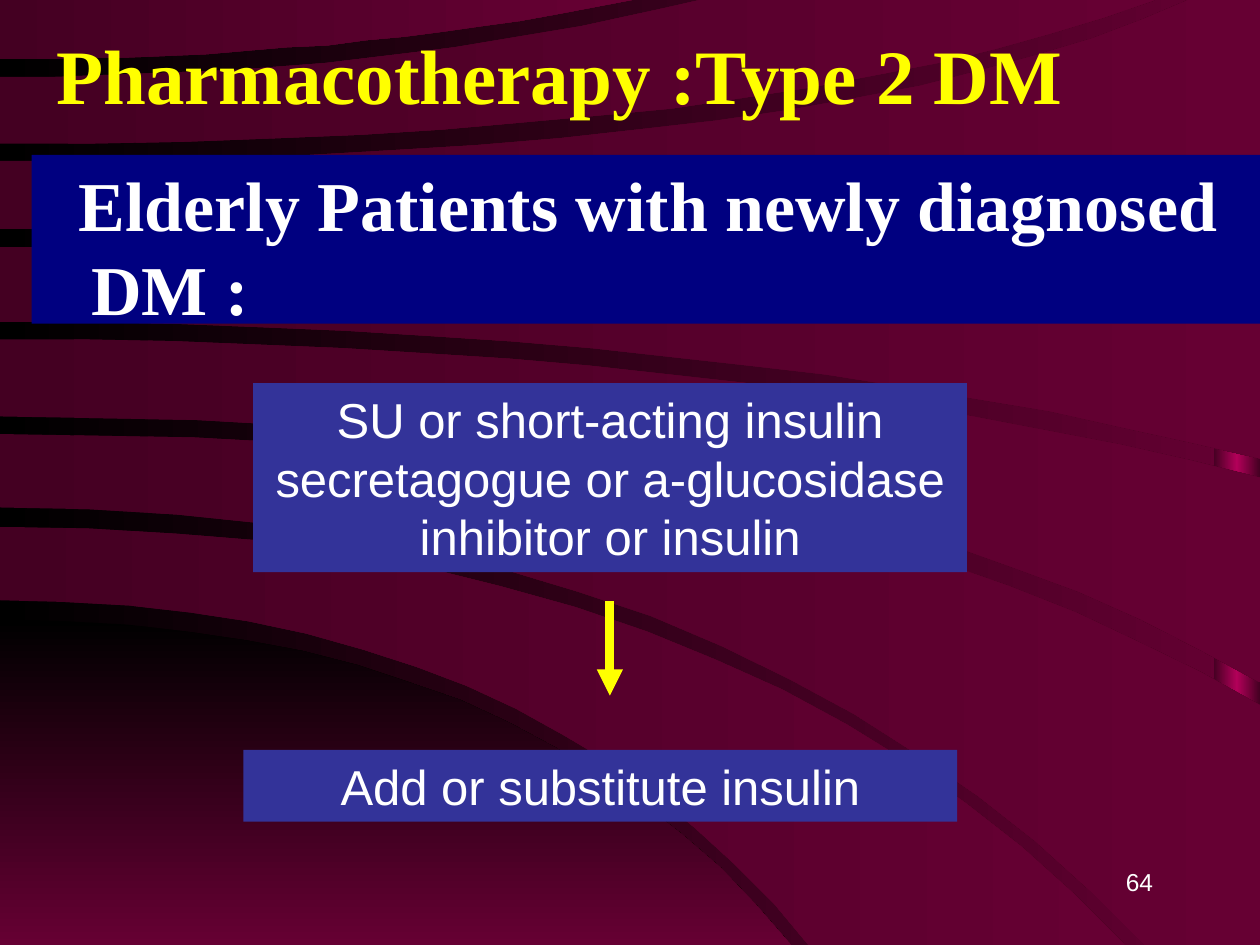
"""Builds a slide on drug therapy for elderly patients with type 2 DM."""
from copy import deepcopy
from dataclasses import dataclass

from pptx import Presentation
from pptx.dml.color import RGBColor
from pptx.dml.fill import FillFormat
from pptx.enum.shapes import MSO_CONNECTOR as Conn, MSO_SHAPE as Kind
from pptx.enum.text import MSO_ANCHOR as Anchor, PP_ALIGN as Align
from pptx.oxml.ns import qn
from pptx.oxml.xmlchemy import OxmlElement as Node
from pptx.slide import Slide
from pptx.util import Pt

WIDE, HIGH = 720, 540
STEPS = 16
BLACK, WINE, PLUM, ROSE = "000000", "660033", "440022", "B20059"
NAVY, BLUE, WHITE, YELLOW = "000080", "333399", "FFFFFF", "FFFF00"
SERIF, SANS = "Times New Roman", "Arial"


@dataclass
class Edge:
    """A curve that leaves the left side level and bends to its end."""
    start: float
    bend: float
    right: float
    end: float

    def trace(self) -> list[tuple[float, float]]:
        """List the points of the curve from left to right."""
        times = [step / STEPS for step in range(STEPS + 1)]
        return [(2 * t * (1 - t) * self.bend + t * t * self.right,
                 self.start + t * t * (self.end - self.start)) for t in times]


@dataclass
class Band:
    top: Edge
    low: Edge
    first: str = PLUM
    angle: float = 0


@dataclass
class Label:
    text: str
    left: float
    top: float
    width: float
    height: float
    size: float
    font: str = SANS
    color: str = WHITE
    fill: str | None = None
    bold: bool = False
    align: Align = Align.LEFT
    anchor: Anchor = Anchor.TOP
    pitch: float | None = None
    before: float = 0
    margin: float = 0
    indent: float = 0


def level(y: float, right: float = WIDE) -> Edge:
    """Make a straight level edge."""
    return Edge(y, right / 2, right, y)


BANDS = (
    Band(Edge(354, 300, 452, HIGH), level(HIGH, 452), BLACK, 270),
    Band(Edge(301, 418, 643, HIGH), Edge(343, 303, 462, HIGH)),
    Band(Edge(248, 458, WIDE, 403), Edge(290, 417, 654, HIGH)),
    Band(Edge(194, 404, WIDE, 273), Edge(238, 462, WIDE, 390)),
    Band(level(141), Edge(184, 408, WIDE, 262)),
    Band(Edge(92, 478, 679, 0), level(131)),
    Band(Edge(44, 222, 400, 0), Edge(82, 438, 660, 0)),
    Band(level(0, 361), Edge(34, 193, 361, 0)),
)

LABELS = (
    Label("64", 516, 492, 150, 36, 14, align=Align.RIGHT),
    Label("Pharmacotherapy :Type 2 DM", 25.2, 0, 672, 84, 44, SERIF, YELLOW,
          bold=True, anchor=Anchor.MIDDLE),
    Label("Elderly Patients with newly diagnosed DM :", 18, 88.5, 702, 96.5, 40, SERIF,
          fill=NAVY, bold=True, pitch=48, before=3, margin=27, indent=-7),
    Label("SU or short-acting insulin secretagogue or a-glucosidase inhibitor or insulin",
          144.6, 219, 408, 108, 28, fill=BLUE, align=Align.CENTER, pitch=33.6),
    Label("Add or substitute insulin", 139, 428.5, 408, 41, 28, fill=BLUE,
          align=Align.CENTER, pitch=33.6),
)


def tint(code: str) -> RGBColor:
    """Turn a hex string into a colour."""
    return RGBColor.from_string(code)


def blend(fill: FillFormat, first: str, last: str, angle: float = 0) -> None:
    """Give a fill a straight two-colour gradient."""
    fill.gradient()
    fill.gradient_angle = angle
    for stop, code, place in zip(fill.gradient_stops, (first, last), (0, 1)):
        stop.color.rgb = tint(code)
        stop.position = place


def draw_strip(slide: Slide) -> None:
    """Draw the shiny strip at the right side."""
    strip = slide.shapes.add_shape(Kind.RECTANGLE, Pt(693.5), 0, Pt(26.5), Pt(HIGH))
    strip.shadow.inherit = False
    strip.line.fill.background()
    blend(strip.fill, PLUM, ROSE)
    stops = strip._element.spPr.find(".//" + qn("a:gsLst"))
    stops[1].set("pos", "50000")
    last = deepcopy(stops[0])
    last.set("pos", "100000")
    stops.append(last)


def draw_band(slide: Slide, band: Band) -> None:
    """Draw the area between two edges, fading to wine."""
    short, long = sorted((band.top, band.low), key=lambda edge: edge.right)
    corner = (long.right, short.end)
    points = [*band.top.trace(), corner, *reversed(band.low.trace())]
    pen = slide.shapes.build_freeform(*points[0], scale=Pt(1))
    pen.add_line_segments(points[1:], close=True)
    shape = pen.convert_to_shape()
    shape.shadow.inherit = False
    shape.line.fill.background()
    blend(shape.fill, band.first, WINE, band.angle)


def draw_label(slide: Slide, label: Label) -> None:
    """Draw one text, on a filled box if it has a fill."""
    area = Pt(label.left), Pt(label.top), Pt(label.width), Pt(label.height)
    if label.fill:
        shape = slide.shapes.add_shape(Kind.RECTANGLE, *area)
        shape.shadow.inherit = False
        shape.line.fill.background()
        shape.fill.solid()
        shape.fill.fore_color.rgb = tint(label.fill)
    else:
        shape = slide.shapes.add_textbox(*area)
    frame = shape.text_frame
    frame.word_wrap = True
    frame.vertical_anchor = label.anchor
    para = frame.paragraphs[0]
    para.text = label.text
    para.alignment = label.align
    para.space_before = Pt(label.before)
    if label.pitch:
        para.line_spacing = Pt(label.pitch)
    if label.margin:
        props = para._p.get_or_add_pPr()
        props.set("marL", str(Pt(label.margin)))
        props.set("indent", str(Pt(label.indent)))
    font = para.font
    font.name, font.size, font.bold = label.font, Pt(label.size), label.bold
    font.color.rgb = tint(label.color)


def draw_arrow(slide: Slide, x: float, top: float, end: float) -> None:
    """Draw the arrow that leads down to the next step."""
    arrow = slide.shapes.add_connector(Conn.STRAIGHT, Pt(x), Pt(top), Pt(x), Pt(end))
    arrow.line.width = Pt(5)
    arrow.line.color.rgb = tint(YELLOW)
    head = Node("a:tailEnd")
    head.set("type", "triangle")
    arrow.line._get_or_add_ln().append(head)
    arrow._element.spPr.append(Node("a:effectLst"))


def main() -> None:
    """Build and save the slide."""
    deck = Presentation()
    deck.slide_width, deck.slide_height = Pt(WIDE), Pt(HIGH)
    slide = deck.slides.add_slide(deck.slide_layouts[6])
    blend(slide.background.fill, BLACK, WINE)
    draw_strip(slide)
    for band in BANDS:
        draw_band(slide, band)
    for label in LABELS:
        draw_label(slide, label)
    draw_arrow(slide, 348.5, 343.5, 397.5)
    deck.save("out.pptx")


if __name__ == "__main__":
    main()
